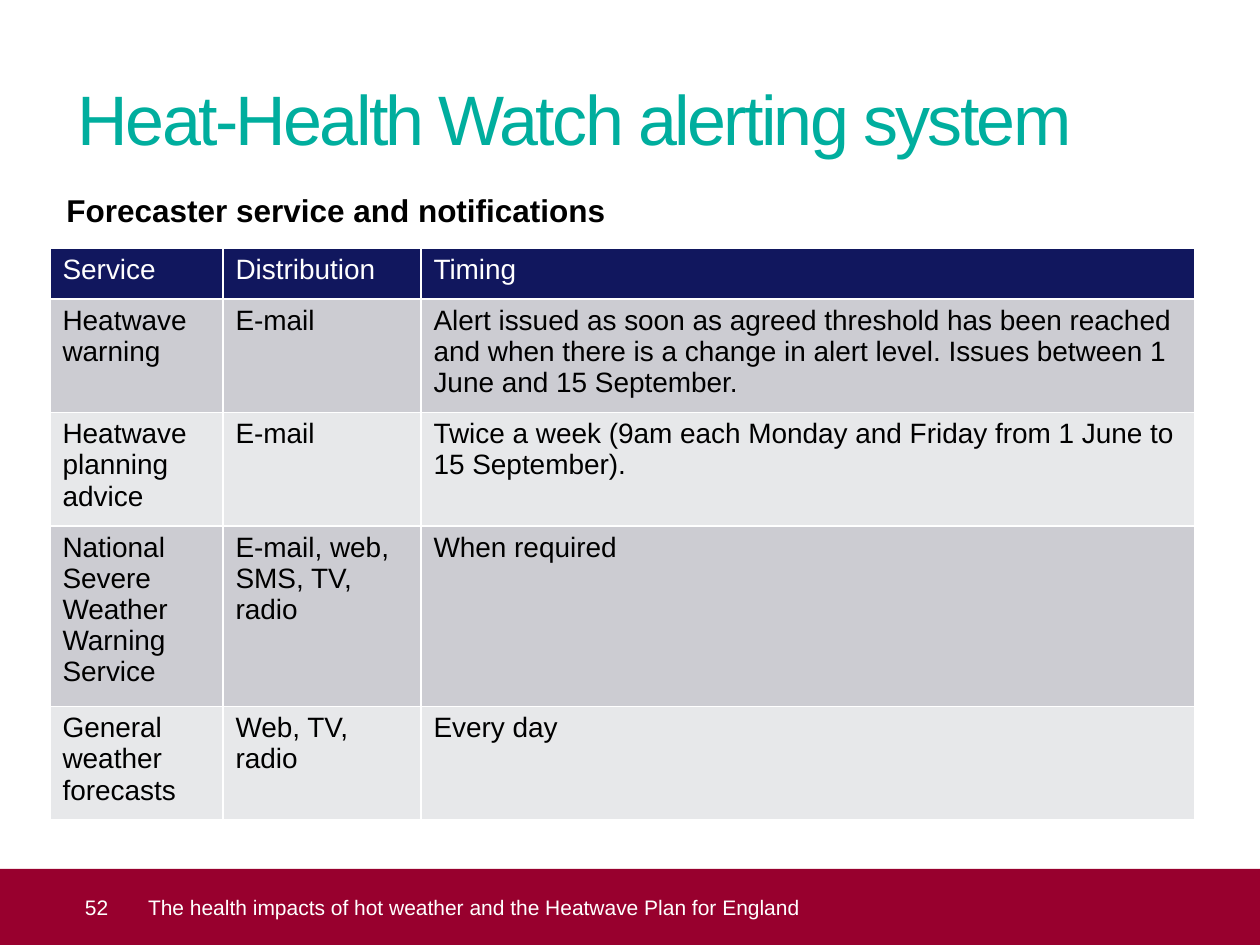
from lxml.etree import SubElement
from pptx import Presentation
from pptx.dml.color import RGBColor
from pptx.enum.shapes import MSO_SHAPE as Shape
from pptx.enum.text import MSO_ANCHOR as Anchor, PP_ALIGN as Align
from pptx.oxml.ns import qn
from pptx.util import Emu, Pt

PX_PER_INCH = 126
FONT = "Arial"
COLORS = {
    "title": "00AE9E",
    "footer": "98002E",
    "header": "11175E",
    "band_dark": "CCCCD2",
    "band_light": "E7E8EA",
    "white": "FFFFFF",
    "black": "000000",
}
COLUMN_WIDTHS = [173, 198, 774]
ROW_HEIGHTS = [51, 113, 113, 180, 113]
SERVICES = [
    ["Service", "Distribution", "Timing"],
    ["Heatwave warning", "E-mail",
     "Alert issued as soon as agreed threshold has been reached and when there is "
     "a change in alert level. Issues between 1 June and 15 September."],
    ["Heatwave planning advice", "E-mail",
     "Twice a week (9am each Monday and Friday from 1 June to 15 September)."],
    ["National Severe Weather Warning Service", "E-mail, web, SMS, TV, radio",
     "When required"],
    ["General weather forecasts", "Web, TV, radio", "Every day"],
]


def px(length):
    return Emu(round(length * 914400 / PX_PER_INCH))


def color(name):
    return RGBColor.from_string(COLORS[name])


def add_run(frame, text, size, color_name, bold=False):
    paragraph = frame.paragraphs[0]
    paragraph.alignment = Align.LEFT
    run = paragraph.add_run()
    run.text = text
    run.font.name = FONT
    run.font.size = Pt(size)
    run.font.bold = bold
    run.font.color.rgb = color(color_name)
    return run


def set_margins(frame, left=0, top=0, right=0, bottom=0):
    frame.margin_left, frame.margin_top = px(left), px(top)
    frame.margin_right, frame.margin_bottom = px(right), px(bottom)


def add_title(slide, left, top, width, height):
    frame = slide.shapes.add_textbox(px(left), px(top), px(width), px(height)).text_frame
    frame.word_wrap = True
    set_margins(frame)
    run = add_run(frame, "Heat-Health Watch alerting system", 40, "title")
    run.font._element.set("spc", "-150")


def add_subtitle(slide, left, top, width, height):
    frame = slide.shapes.add_textbox(px(left), px(top), px(width), px(height)).text_frame
    frame.word_wrap = True
    add_run(frame, "Forecaster service and notifications", 18, "black", bold=True)


def add_borders(cell):
    """Draw a thin white line on all four sides; call before filling the cell."""
    properties = cell._tc.get_or_add_tcPr()
    for side in ("lnL", "lnR", "lnT", "lnB"):
        line = SubElement(properties, qn(f"a:{side}"), w=str(Pt(1)))
        fill = SubElement(line, qn("a:solidFill"))
        SubElement(fill, qn("a:srgbClr"), val=COLORS["white"])


def add_services_table(slide, left, top):
    table = slide.shapes.add_table(
        len(SERVICES), len(COLUMN_WIDTHS), px(left), px(top),
        px(sum(COLUMN_WIDTHS)), px(sum(ROW_HEIGHTS))).table
    for column, width in zip(table.columns, COLUMN_WIDTHS):
        column.width = px(width)
    for index, (row, height, texts) in enumerate(zip(table.rows, ROW_HEIGHTS, SERVICES)):
        row.height = px(height)
        if index == 0:
            background, ink = "header", "white"
        else:
            background, ink = ("band_dark" if index % 2 else "band_light"), "black"
        for cell, text in zip(row.cells, texts):
            add_borders(cell)
            cell.fill.solid()
            cell.fill.fore_color.rgb = color(background)
            add_run(cell.text_frame, text, 16, ink)


def add_footer(slide, left, top, width, height):
    band = slide.shapes.add_shape(
        Shape.RECTANGLE, px(left), px(top), px(width), px(height))
    band.shadow.inherit = False
    band.fill.solid()
    band.fill.fore_color.rgb = color("footer")
    band.line.fill.background()
    caption = slide.shapes.add_textbox(
        px(left + 124), px(top), px(width - 148), px(height))
    for shape, text, indent in (
            (band, "52", 85),
            (caption, "The health impacts of hot weather and the Heatwave Plan for England", 24)):
        frame = shape.text_frame
        frame.word_wrap = True
        frame.vertical_anchor = Anchor.MIDDLE
        set_margins(frame, left=indent)
        add_run(frame, text, 12, "white")


def main():
    presentation = Presentation()
    presentation.slide_width, presentation.slide_height = px(1260), px(945)
    slide = presentation.slides.add_slide(presentation.slide_layouts[6])
    add_title(slide, 78, 76, 1106, 89)
    add_footer(slide, 0, 869, 1260, 76)
    add_subtitle(slide, 54, 185, 640, 50)
    add_services_table(slide, 50, 248)
    presentation.save("out.pptx")


if __name__ == "__main__":
    main()
